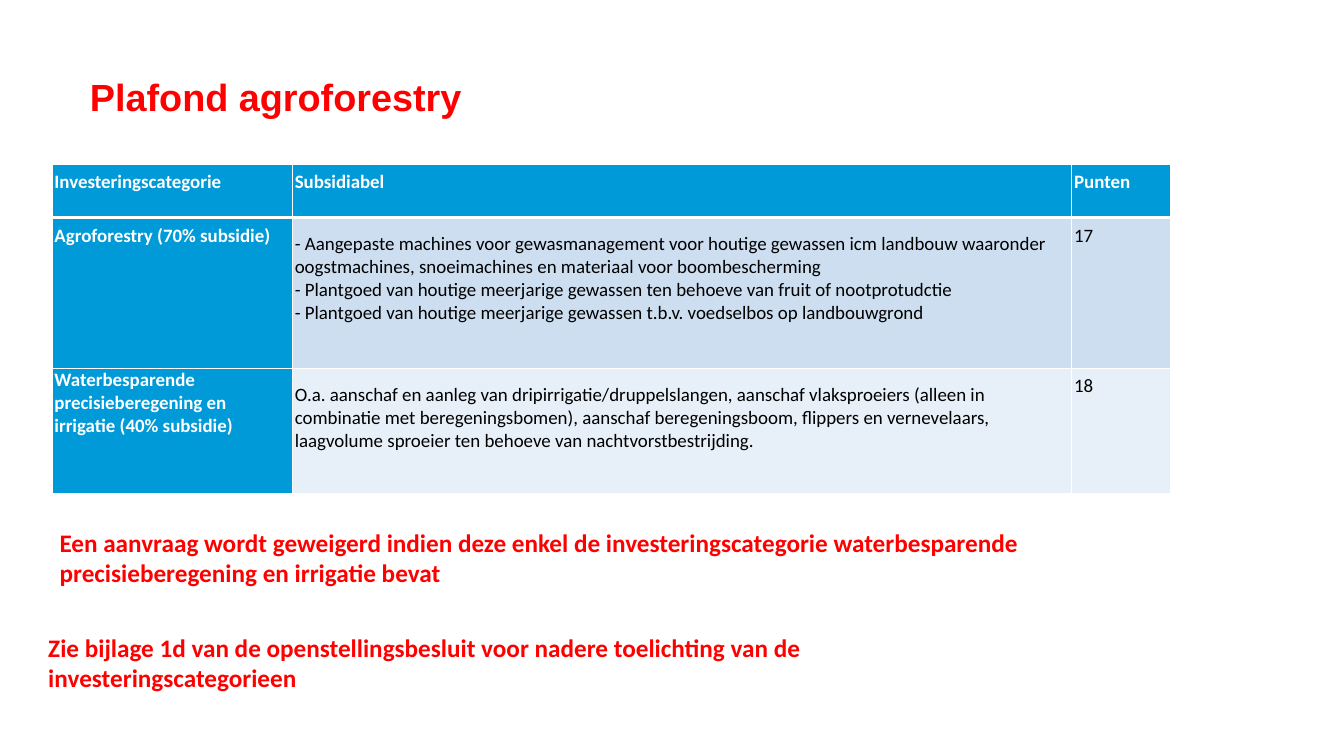
from lxml.etree import SubElement as Sub
from pptx import Presentation
from pptx.dml.color import RGBColor
from pptx.enum.text import MSO_ANCHOR as Anchor, MSO_AUTO_SIZE as Fit, PP_ALIGN as Align
from pptx.oxml.ns import qn
from pptx.util import Inches, Pt

RED = RGBColor(0xFF, 0x00, 0x00)
BLUE = RGBColor(0x00, 0x9A, 0xD8)
WHITE = RGBColor(0xFF, 0xFF, 0xFF)
BLACK = RGBColor(0x00, 0x00, 0x00)
BANDS = [RGBColor(0xCC, 0xDE, 0xF0), RGBColor(0xE7, 0xEF, 0xF8)]

COLS = [3.18, 10.31, 1.3]
ROWS = [0.71, 1.99, 1.66]
CELLS = [
    ["Investeringscategorie", "Subsidiabel", "Punten"],
    ["Agroforestry (70% subsidie)",
     "- Aangepaste machines voor gewasmanagement voor houtige gewassen icm landbouw "
     "waaronder oogstmachines, snoeimachines en materiaal voor boombescherming\n"
     "- Plantgoed van houtige meerjarige gewassen ten behoeve van fruit of nootprotudctie\n"
     "- Plantgoed van houtige meerjarige gewassen t.b.v. voedselbos op landbouwgrond",
     "17"],
    ["Waterbesparende precisieberegening en irrigatie (40% subsidie)",
     "O.a. aanschaf en aanleg van dripirrigatie/druppelslangen, aanschaf vlaksproeiers "
     "(alleen in combinatie met beregeningsbomen), aanschaf beregeningsboom, flippers en "
     "vernevelaars, laagvolume sproeier ten behoeve van nachtvorstbestrijding.",
     "18"],
]


class Deck:
    head_font = "Arial"
    body_font = "Calibri"
    tight = Pt(14.2)

    def __init__(self, slide):
        self.slide = slide

    def style(self, frame, size, color, bold, font=None):
        for par in frame.paragraphs:
            for run in par.runs:
                run.font.name = font or self.body_font
                run.font.size = Pt(size)
                run.font.bold = bold
                run.font.color.rgb = color

    def title(self, text, left, top, width, height):
        shape = self.slide.shapes.title
        shape.left, shape.top = Inches(left), Inches(top)
        shape.width, shape.height = Inches(width), Inches(height)
        frame = shape.text_frame
        frame.text = text
        frame.auto_size = Fit.NONE
        frame.vertical_anchor = Anchor.TOP
        frame.margin_left = frame.margin_right = 0
        frame.margin_top = frame.margin_bottom = 0
        frame.paragraphs[0].alignment = Align.LEFT
        self.style(frame, 36, RED, True, self.head_font)

    def note(self, text, left, top, width, height):
        box = self.slide.shapes.add_textbox(
            Inches(left), Inches(top), Inches(width), Inches(height))
        frame = box.text_frame
        frame.word_wrap = True
        frame.auto_size = Fit.SHAPE_TO_FIT_TEXT
        frame.text = text
        self.style(frame, 24, RED, True)

    def edges(self, cell, row):
        props = cell._tc.get_or_add_tcPr()
        thick = {0: "lnB", 1: "lnT"}.get(row)
        for side in ("lnL", "lnR", "lnT", "lnB"):
            line = Sub(props, qn(f"a:{side}"), w=str(Pt(3 if side == thick else 1)))
            fill = Sub(line, qn("a:solidFill"))
            Sub(fill, qn("a:srgbClr"), val=str(WHITE))

    def cell(self, cell, text, row, col):
        label = row == 0 or col == 0
        # The tall label fills its cell from the top; the rest start a line lower
        low = (row, col) != (2, 0)
        cell.margin_left = cell.margin_right = Inches(0.03)
        cell.margin_top = self.tight if low else 0
        cell.margin_bottom = 0
        cell.vertical_anchor = Anchor.TOP
        self.edges(cell, row)
        cell.fill.solid()
        cell.fill.fore_color.rgb = BLUE if label else BANDS[row - 1]
        frame = cell.text_frame
        frame.text = text
        if low and (row == 0 or col != 1):
            frame.paragraphs[0].line_spacing = self.tight
        self.style(frame, 18, WHITE if label else BLACK, label)

    def table(self, cells, cols, rows, left, top):
        grid = self.slide.shapes.add_table(
            len(rows), len(cols), Inches(left), Inches(top),
            Inches(sum(cols)), Inches(sum(rows))).table
        for col, width in zip(grid.columns, cols):
            col.width = Inches(width)
        for row, height in zip(grid.rows, rows):
            row.height = Inches(height)
        for r, line in enumerate(cells):
            for c, text in enumerate(line):
                self.cell(grid.cell(r, c), text, r, c)


def main():
    prs = Presentation()
    prs.slide_width, prs.slide_height = Inches(17.78), Inches(10)
    deck = Deck(prs.slides.add_slide(prs.slide_layouts[5]))

    # Heading
    deck.title("Plafond agroforestry", 1.19, 0.98, 15.4, 1.03)

    # Investment categories
    deck.table(CELLS, COLS, ROWS, 0.69, 2.17)

    # Remarks
    deck.note("Een aanvraag wordt geweigerd indien deze enkel de investeringscategorie "
              "waterbesparende precisieberegening en irrigatie bevat",
              0.69, 6.92, 14.1, 0.91)
    deck.note("Zie bijlage 1d van de openstellingsbesluit voor nadere toelichting van de "
              "investeringscategorieen", 0.54, 8.31, 12.66, 0.91)

    prs.save("out.pptx")


if __name__ == "__main__":
    main()
